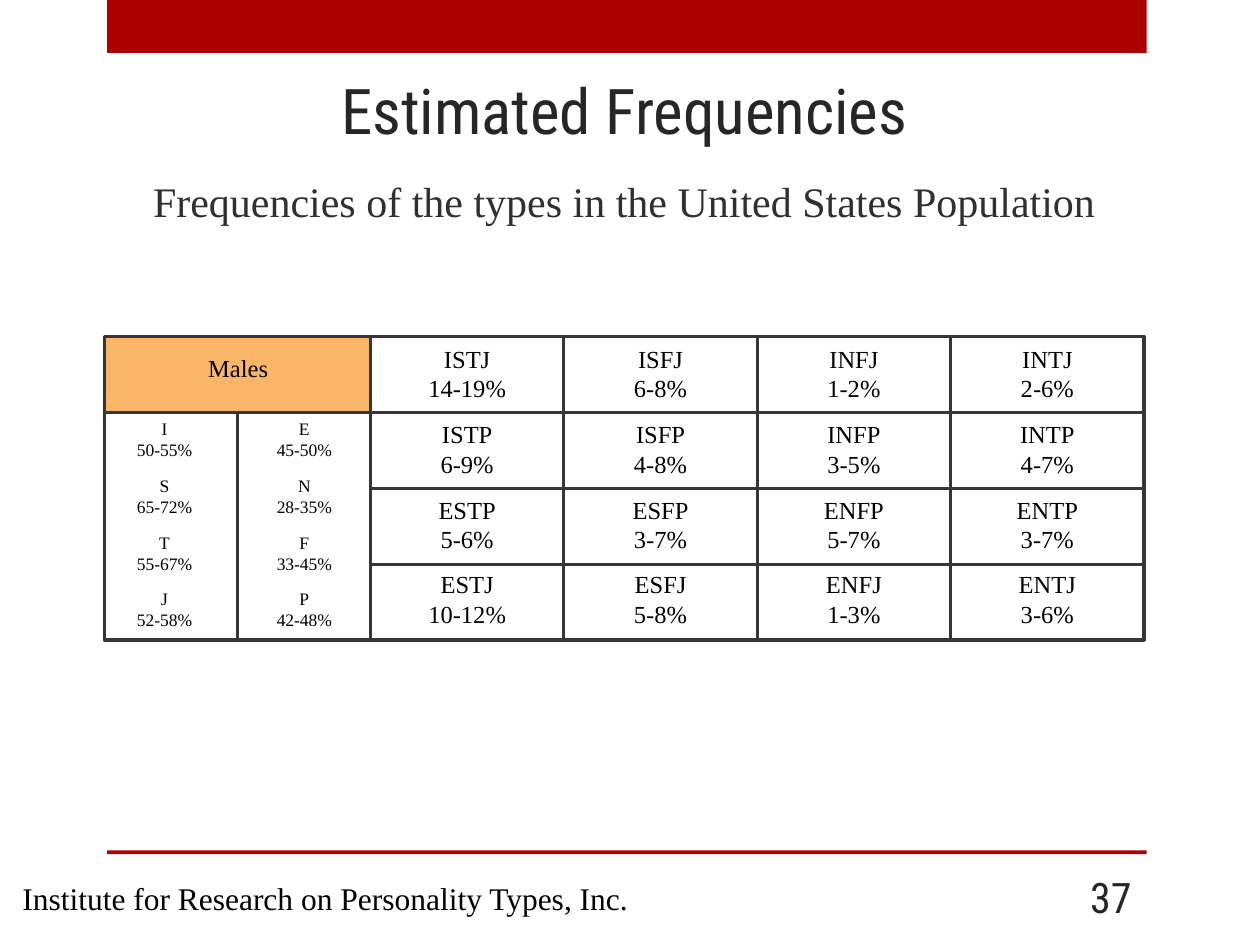
from dataclasses import dataclass

from pptx import Presentation
from pptx.dml.color import RGBColor
from pptx.enum.shapes import MSO_SHAPE
from pptx.enum.text import MSO_ANCHOR, MSO_AUTO_SIZE, PP_ALIGN
from pptx.util import Inches, Pt
from lxml import etree

TITLE = "Estimated Frequencies"
SUBTITLE = "Frequencies of the types in the United States Population"
GROUP_LABEL = "Males"
FOOTER = "Institute for Research on Personality Types, Inc."
PAGE_NUMBER = "37"

TYPE_ROWS = [
    [("ISTJ", "14-19%"), ("ISFJ", "6-8%"), ("INFJ", "1-2%"), ("INTJ", "2-6%")],
    [("ISTP", "6-9%"), ("ISFP", "4-8%"), ("INFP", "3-5%"), ("INTP", "4-7%")],
    [("ESTP", "5-6%"), ("ESFP", "3-7%"), ("ENFP", "5-7%"), ("ENTP", "3-7%")],
    [("ESTJ", "10-12%"), ("ESFJ", "5-8%"), ("ENFJ", "1-3%"), ("ENTJ", "3-6%")],
]
PREFERENCE_COLUMNS = [
    [("I", "50-55%"), ("S", "65-72%"), ("T", "55-67%"), ("J", "52-58%")],
    [("E", "45-50%"), ("N", "28-35%"), ("F", "33-45%"), ("P", "42-48%")],
]


@dataclass(frozen=True)
class Theme:
    heading_font: str = "Roboto Condensed"
    text_font: str = "Times New Roman"
    red: str = "AD0101"
    orange: str = "FAB668"
    white: str = "FFFFFF"
    border: str = "363639"
    heading: str = "262626"
    subtitle: str = "303030"
    text: str = "000000"
    title_size: int = 36
    subtitle_size: int = 24
    footer_size: int = 18
    type_size: int = 14
    preference_size: int = 10
    border_width: float = 1.75


THEME = Theme()

# Grid, in inches
LEFT, TOP, RIGHT, BOTTOM = 0.83, 2.67, 9.08, 5.08
TYPE_LEFT = 2.94
PREFERENCE_WIDTH = (TYPE_LEFT - LEFT) / 2
TYPE_WIDTH = (RIGHT - TYPE_LEFT) / len(TYPE_ROWS[0])
ROW_HEIGHT = (BOTTOM - TOP) / len(TYPE_ROWS)
TYPE_TEXT_WIDTH = 0.82
TYPE_TEXT_TOPS = (2.68, 3.28, 3.88, 4.47)
PREFERENCE_TEXT_LEFTS = (0.98, 2.09)
PREFERENCE_TEXT_TOP, PREFERENCE_STEP = 3.27, 0.45


def inches(*lengths):
    return [Inches(length) for length in lengths]


def write(frame, lines, size, color=THEME.text, font=THEME.text_font,
          align=PP_ALIGN.CENTER):
    frame.text = "\n".join(lines)
    for para in frame.paragraphs:
        para.alignment = align
        for span in para.runs:
            span.font.name = font
            span.font.size = Pt(size)
            span.font.color.rgb = RGBColor.from_string(color)


def add_rectangle(slide, bounds, fill, bordered=True):
    box = slide.shapes.add_shape(MSO_SHAPE.RECTANGLE, *inches(*bounds))
    box.shadow.inherit = False
    box.fill.solid()
    box.fill.fore_color.rgb = RGBColor.from_string(fill)
    if bordered:
        box.line.color.rgb = RGBColor.from_string(THEME.border)
        box.line.width = Pt(THEME.border_width)
    else:
        box.line.fill.background()


def add_label(shapes, bounds, lines, size):
    """Add a text box that fits its unwrapped, centred lines."""
    box = shapes.add_textbox(*inches(*bounds))
    box.text_frame.word_wrap = False
    box.text_frame.auto_size = MSO_AUTO_SIZE.SHAPE_TO_FIT_TEXT
    write(box.text_frame, lines, size)


def fill_placeholder(holder, bounds, text, size, color, font):
    holder.left, holder.top, holder.width, holder.height = inches(*bounds)
    frame = holder.text_frame
    write(frame, [text], size, color, font)
    frame.vertical_anchor = MSO_ANCHOR.MIDDLE
    frame.auto_size = MSO_AUTO_SIZE.NONE
    para = frame.paragraphs[0]
    para.space_before = Pt(0)
    properties = para._p.get_or_add_pPr()
    properties.set("marL", "0")
    properties.set("indent", "0")
    namespace = "http://schemas.openxmlformats.org/drawingml/2006/main"
    etree.SubElement(properties, f"{{{namespace}}}buNone")


def add_headings(slide):
    for top, height in ((0, 0.42), (6.75, 0.03)):
        add_rectangle(slide, (0.85, top, 8.25, height), THEME.red, bordered=False)
    fill_placeholder(slide.shapes.title, (LEFT, 0.51, 8.25, 0.72), TITLE,
                     THEME.title_size, THEME.heading, THEME.heading_font)
    fill_placeholder(slide.placeholders[1], (LEFT, 1.3, 8.25, 0.58), SUBTITLE,
                     THEME.subtitle_size, THEME.subtitle, THEME.text_font)


def add_preferences(slide):
    add_rectangle(slide, (LEFT, TOP, 2 * PREFERENCE_WIDTH, ROW_HEIGHT), THEME.orange)
    add_label(slide.shapes, (1.55, 2.75, 0.68, 0.34), [GROUP_LABEL], THEME.type_size)
    for column, preferences in enumerate(PREFERENCE_COLUMNS):
        add_rectangle(slide, (LEFT + column * PREFERENCE_WIDTH, TOP + ROW_HEIGHT,
                              PREFERENCE_WIDTH, 3 * ROW_HEIGHT), THEME.white)
        group = slide.shapes.add_group_shape()
        for row, lines in enumerate(preferences):
            top = PREFERENCE_TEXT_TOP + row * PREFERENCE_STEP
            add_label(group.shapes, (PREFERENCE_TEXT_LEFTS[column], top, 0.65, 0.44),
                      lines, THEME.preference_size)


def add_types(slide):
    for row, types in enumerate(TYPE_ROWS):
        for column, lines in enumerate(types):
            left = TYPE_LEFT + column * TYPE_WIDTH
            add_rectangle(slide, (left, TOP + row * ROW_HEIGHT, TYPE_WIDTH, ROW_HEIGHT),
                          THEME.white)
            text_left = left + (TYPE_WIDTH - TYPE_TEXT_WIDTH) / 2
            add_label(slide.shapes,
                      (text_left, TYPE_TEXT_TOPS[row], TYPE_TEXT_WIDTH, 0.57),
                      lines, THEME.type_size)


def add_footer(slide):
    footer = slide.shapes.add_textbox(*inches(0.08, 6.93, 5.83, 0.4))
    footer.text_frame.word_wrap = True
    write(footer.text_frame, [FOOTER], THEME.footer_size, align=PP_ALIGN.LEFT)
    number = slide.shapes.add_textbox(*inches(8.25, 6.92, 0.83, 0.4))
    number.text_frame.word_wrap = True
    number.text_frame.vertical_anchor = MSO_ANCHOR.MIDDLE
    write(number.text_frame, [PAGE_NUMBER], THEME.subtitle_size, THEME.heading,
          THEME.heading_font, PP_ALIGN.RIGHT)


def main():
    deck = Presentation()
    deck.slide_width, deck.slide_height = inches(10, 7.5)
    slide = deck.slides.add_slide(deck.slide_layouts[1])
    add_headings(slide)
    add_preferences(slide)
    add_types(slide)
    add_footer(slide)
    deck.save("out.pptx")


if __name__ == "__main__":
    main()
